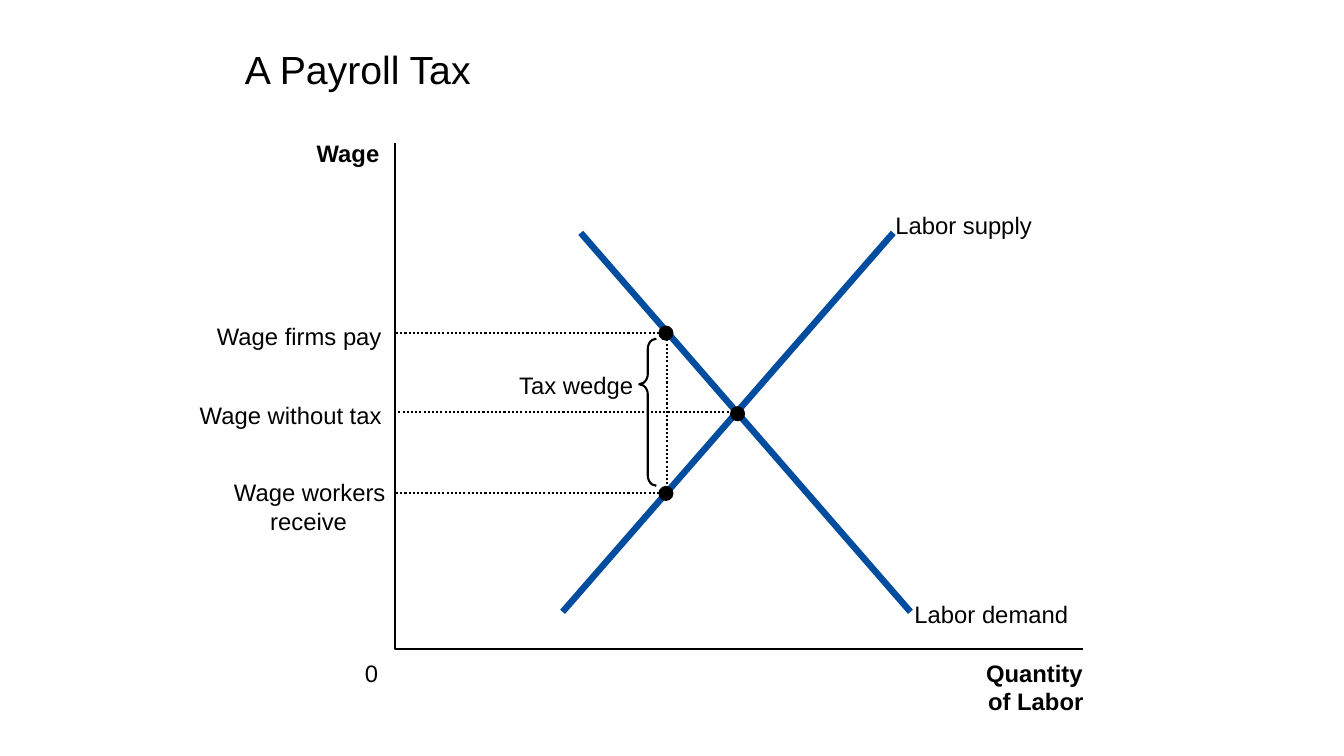
from lxml import etree
from pptx import Presentation
from pptx.dml.color import RGBColor
from pptx.enum.dml import MSO_LINE
from pptx.enum.shapes import MSO_CONNECTOR, MSO_SHAPE
from pptx.enum.text import MSO_ANCHOR, MSO_AUTO_SIZE, PP_ALIGN
from pptx.oxml.ns import qn
from pptx.util import Inches, Pt

BLACK = "000000"
BLUE = "004C9F"
AXIS_X = 3.92
TAXED_X = 6.62
FIRMS_Y, MARKET_Y, WORKERS_Y = 3.3, 4.09, 4.89


def paint(color_format, color):
    color_format.rgb = RGBColor.from_string(color)


def add_line(start, end, color, width, dash=None):
    points = [Inches(value) for value in (*start, *end)]
    line = slide.shapes.add_connector(MSO_CONNECTOR.STRAIGHT, *points)
    paint(line.line.color, color)
    line.line.width = Pt(width)
    if dash:
        line.line.dash_style = dash
    etree.SubElement(line._element.spPr, qn("a:effectLst"))


presentation = Presentation()
presentation.slide_width = Inches(13.33)
presentation.slide_height = Inches(7.5)
slide = presentation.slides.add_slide(presentation.slide_layouts[5])

title = slide.shapes.title
title.left, title.top = Inches(2.33), Inches(0.38)
title.width, title.height = Inches(8.84), Inches(0.7)
title.text_frame.auto_size = MSO_AUTO_SIZE.NONE
title.text_frame.vertical_anchor = MSO_ANCHOR.MIDDLE
paragraph = title.text_frame.paragraphs[0]
paragraph.alignment = PP_ALIGN.LEFT
paragraph.line_spacing = 0.8
run = paragraph.add_run()
run.text = "A Payroll Tax"
run.font.name = "Arial"
run.font.size = Pt(28)
paint(run.font.color, BLACK)

builder = slide.shapes.build_freeform(Inches(AXIS_X), Inches(1.42))
builder.add_line_segments(
    [(Inches(AXIS_X), Inches(6.44)), (Inches(10.74), Inches(6.44))], close=False
)
axes = builder.convert_to_shape()
axes.fill.background()

add_line((9.03, 6.07), (5.76, 2.31), BLUE, 4.63)
add_line((5.58, 6.07), (8.86, 2.31), BLUE, 4.63)
add_line((TAXED_X, WORKERS_Y), (TAXED_X, FIRMS_Y), BLACK, 1.5, MSO_LINE.ROUND_DOT)

brace = slide.shapes.add_shape(
    MSO_SHAPE.LEFT_BRACE, Inches(6.34), Inches(3.36), Inches(0.17), Inches(1.46)
)
brace.adjustments[0] = 0.6
brace.adjustments[1] = 0.31
brace.fill.background()

for outline in (axes, brace):
    outline.shadow.inherit = False
    paint(outline.line.color, BLACK)
    outline.line.width = Pt(1.5)

for x, y, dot_left, dot_top in [
    (TAXED_X, WORKERS_Y, 6.53, 4.82),
    (TAXED_X, FIRMS_Y, 6.53, 3.23),
    (7.31, MARKET_Y, 7.24, 4.03),
]:
    dot = slide.shapes.add_shape(
        MSO_SHAPE.OVAL, Inches(dot_left), Inches(dot_top), Inches(0.15), Inches(0.15)
    )
    dot.shadow.inherit = False
    dot.fill.solid()
    paint(dot.fill.fore_color, BLACK)
    dot.line.fill.background()
    add_line((x, y), (AXIS_X, y), BLACK, 1.5, MSO_LINE.ROUND_DOT)

for text, left, top, width, bold in [
    ("Quantity", 9.78, 6.53, 0.97, True),
    ("of Labor", 9.8, 6.81, 0.95, True),
    ("0", 3.62, 6.53, 0.13, False),
    ("Wage", 3.14, 1.38, 0.63, True),
    ("Labor demand", 9.07, 5.95, 1.54, False),
    ("Labor supply", 8.88, 2.09, 1.37, False),
    ("Tax wedge", 5.15, 3.68, 1.14, False),
    ("Wage workers", 2.32, 4.74, 1.52, False),
    ("receive", 2.68, 5.03, 0.77, False),
    ("Wage firms pay", 2.15, 3.19, 1.65, False),
    ("Wage without tax", 1.98, 3.98, 1.82, False),
]:
    label = slide.shapes.add_textbox(
        Inches(left), Inches(top), Inches(width), Inches(0.29)
    )
    frame = label.text_frame
    frame.margin_left = frame.margin_right = Inches(0)
    frame.margin_top = frame.margin_bottom = Inches(0)
    frame.word_wrap = False
    frame.auto_size = MSO_AUTO_SIZE.SHAPE_TO_FIT_TEXT
    run = frame.paragraphs[0].add_run()
    run.text = text
    run.font.name = "Arial"
    run.font.size = Pt(17)
    run.font.bold = bold
    paint(run.font.color, BLACK)

presentation.save("out.pptx")
